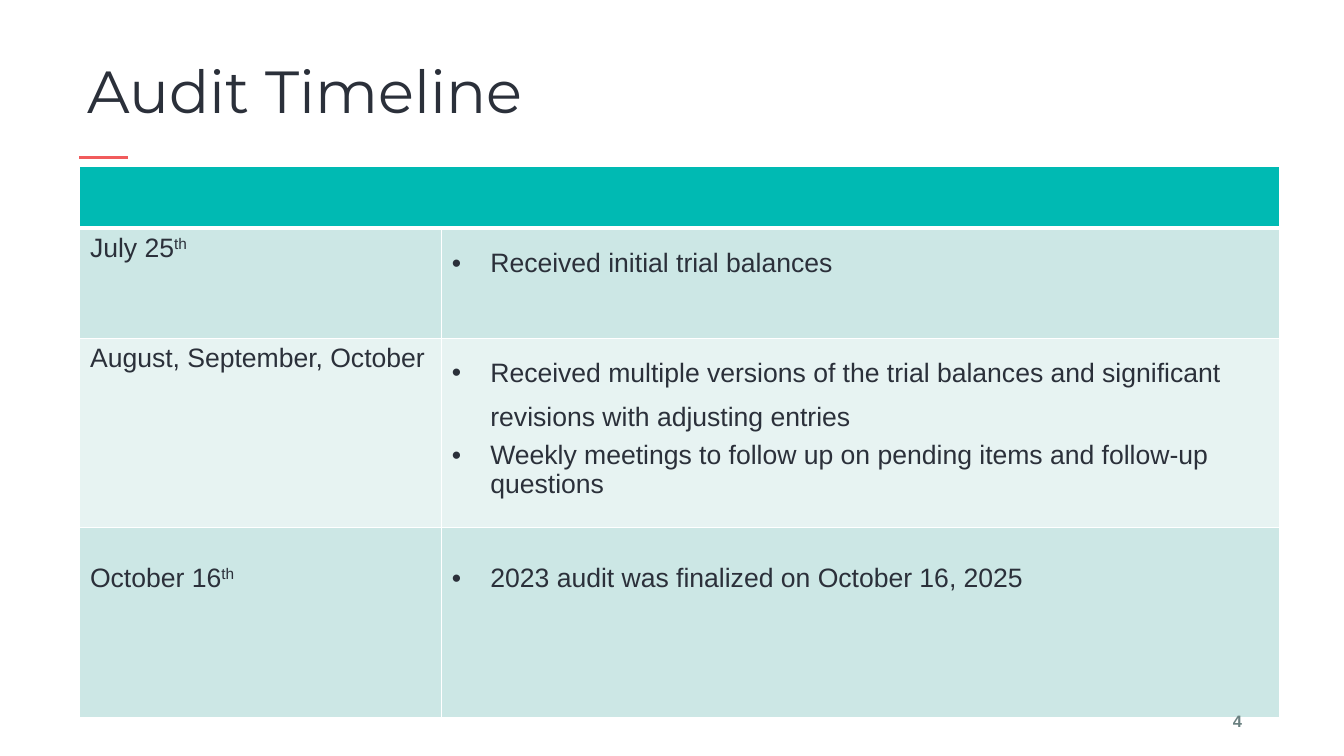
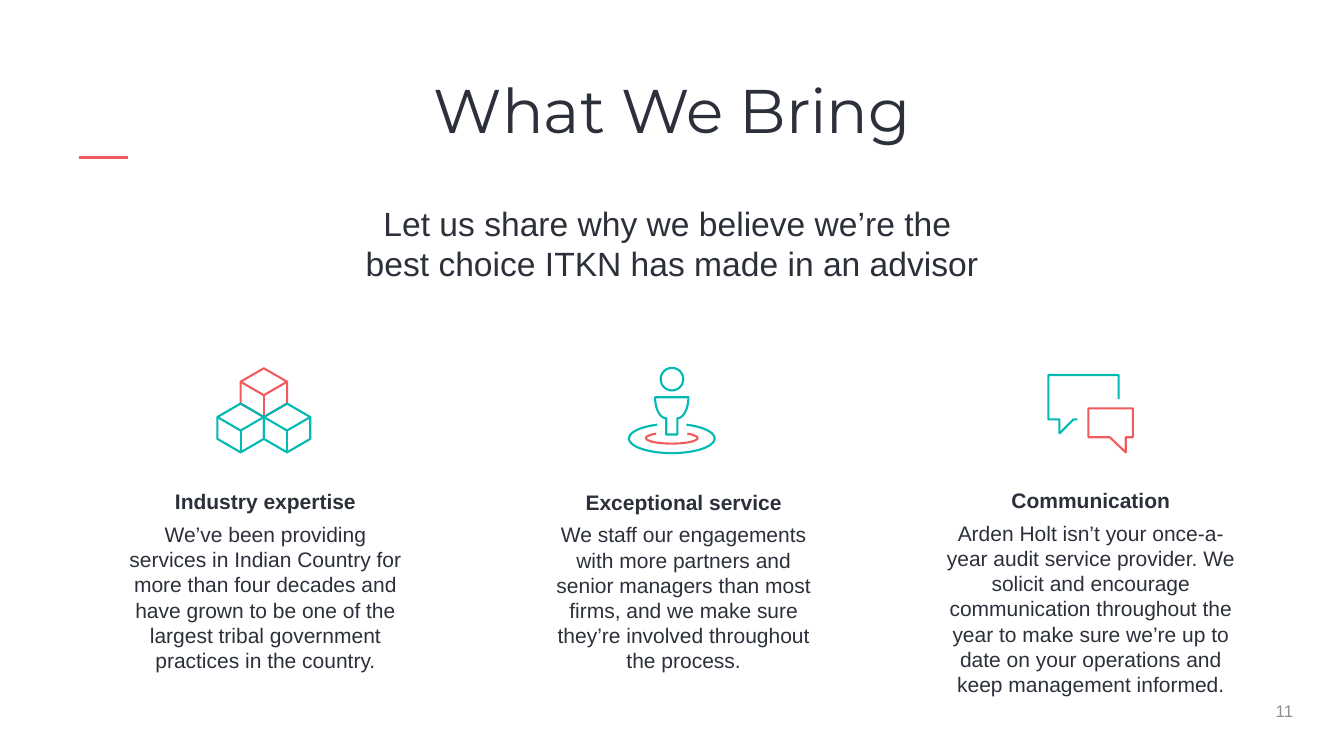
from math import cos, radians, sin

from lxml import etree
from pptx import Presentation
from pptx.dml.color import RGBColor
from pptx.enum.shapes import MSO_CONNECTOR, MSO_SHAPE
from pptx.enum.text import MSO_ANCHOR, MSO_AUTO_SIZE, PP_ALIGN
from pptx.oxml.ns import qn
from pptx.util import Cm, Pt

LEFT, CENTER, RIGHT = PP_ALIGN.LEFT, PP_ALIGN.CENTER, PP_ALIGN.RIGHT
MIDDLE, NO_AUTOFIT = MSO_ANCHOR.MIDDLE, MSO_AUTO_SIZE.NONE
STRAIGHT, OVAL = MSO_CONNECTOR.STRAIGHT, MSO_SHAPE.OVAL

INK = RGBColor(0x2B, 0x30, 0x3A)
TEAL = RGBColor(0x00, 0xBA, 0xB3)
CORAL = RGBColor(0xF1, 0x5B, 0x5C)
BAND_DARK = RGBColor(0xCC, 0xE7, 0xE5)
BAND_LIGHT = RGBColor(0xE7, 0xF3, 0xF2)
SLATE = RGBColor(0x6A, 0x80, 0x80)
GRAY = RGBColor(0x8F, 0x8F, 0x91)

TITLE_FONT, BODY_FONT = "Montserrat", "Arial"
TITLE_ONLY, TITLE_AND_BODY = 5, 1
ICON_LINE = 1.5
TABLE_SIZE = 19


def arc(center_x, center_y, radius_x, radius_y, start, end, steps=40):
    """Points along an ellipse; angles in degrees, clockwise from the right."""
    angles = [radians(start + (end - start) * step / steps) for step in range(steps + 1)]
    return [(center_x + radius_x * cos(angle), center_y + radius_y * sin(angle))
            for angle in angles]


def set_bullet(paragraph, character, indent):
    """Give a hanging bullet, or none when character is None."""
    properties = paragraph._p.get_or_add_pPr()
    properties.set("marL", str(Cm(indent)))
    properties.set("indent", str(-Cm(indent)))
    if character:
        etree.SubElement(properties, qn("a:buFont"), typeface=BODY_FONT)
        etree.SubElement(properties, qn("a:buChar"), char=character)
    else:
        etree.SubElement(properties, qn("a:buNone"))


def set_border(cell, side, width):
    border = etree.SubElement(cell._tc.get_or_add_tcPr(), qn("a:ln" + side), w=str(Pt(width)))
    fill = etree.SubElement(border, qn("a:solidFill"))
    etree.SubElement(fill, qn("a:srgbClr"), val="FFFFFF")


class Deck:
    """Holds the shared style and the slide being filled."""

    def __init__(self):
        self.presentation = Presentation()
        self.presentation.slide_width = Cm(33.87)
        self.presentation.slide_height = Cm(19.05)
        self.slide = None

    def new_slide(self, layout):
        layouts = self.presentation.slide_layouts
        self.slide = self.presentation.slides.add_slide(layouts[layout])
        self.line(self.slide.shapes, (2, 3.97), (3.23, 3.97), CORAL, 2)

    def run(self, paragraph, text, size, color=INK, font=BODY_FONT, bold=False, raised=False):
        run = paragraph.add_run()
        run.text = text
        run.font.size = Pt(size)
        run.font.name = font
        run.font.bold = bold
        run.font.color.rgb = color
        if raised:
            run._r.get_or_add_rPr().set("baseline", "30000")

    def place(self, shape, left, top, width, height):
        shape.left, shape.top = Cm(left), Cm(top)
        shape.width, shape.height = Cm(width), Cm(height)
        shape.text_frame.word_wrap = True
        shape.text_frame.auto_size = NO_AUTOFIT
        return shape.text_frame

    def title(self, text, box, size, alignment):
        frame = self.place(self.slide.shapes.title, *box)
        frame.vertical_anchor = MIDDLE
        paragraph = frame.paragraphs[0]
        paragraph.alignment = alignment
        paragraph.line_spacing = 0.9
        self.run(paragraph, text, size, font=TITLE_FONT)

    def body(self, lines, box, size):
        frame = self.place(self.slide.placeholders[1], *box)
        paragraph = frame.paragraphs[0]
        set_bullet(paragraph, None, 0)
        paragraph.alignment = CENTER
        paragraph.space_before = Pt(0)
        for index, line in enumerate(lines):
            if index:
                paragraph.add_line_break()
            self.run(paragraph, line, size)

    def text_box(self, *box):
        return self.place(self.slide.shapes.add_textbox(0, 0, 0, 0), *box)

    def page_number(self, number, left, top, size, color, bold=False):
        frame = self.text_box(left, top, 7.62, 1.02)
        frame.vertical_anchor = MIDDLE
        frame.paragraphs[0].alignment = RIGHT
        self.run(frame.paragraphs[0], number, size, color, bold=bold)

    def strength(self, heading, text, left, top, width):
        """A bold heading above centred text."""
        frame = self.text_box(left, top, width, 5.79)
        first, second = frame.paragraphs[0], frame.add_paragraph()
        first.alignment = second.alignment = CENTER
        first.line_spacing = 0.9
        second.space_before = Pt(5)
        self.run(first, heading, 15, bold=True)
        self.run(second, text, 15)

    def timeline(self, entries, box, widths, heights):
        """Entries are (date, suffix, bullets, top margin); a blank header row comes first.

        Each bullet is (text, line spacing, space after).
        """
        left, top, width, height = map(Cm, box)
        shapes = self.slide.shapes
        table = shapes.add_table(len(heights), len(widths), left, top, width, height).table
        for column, column_width in zip(table.columns, widths):
            column.width = Cm(column_width)
        for row, row_height in zip(table.rows, heights):
            row.height = Cm(row_height)
        fills = [TEAL, BAND_DARK, BAND_LIGHT, BAND_DARK]
        for row_index, row in enumerate(table.rows):
            for cell in row.cells:
                for side in "LRTB":
                    under_header = (row_index, side) in ((0, "B"), (1, "T"))
                    set_border(cell, side, 3 if under_header else 1)
                cell.fill.solid()
                cell.fill.fore_color.rgb = fills[row_index]
                cell.margin_left = cell.margin_right = Cm(0.27)
        table.cell(0, 0).merge(table.cell(0, len(widths) - 1))
        for row_index, (date, suffix, bullets, margin) in enumerate(entries, 1):
            date_cell, notes_cell = table.cell(row_index, 0), table.cell(row_index, 1)
            date_cell.margin_top = notes_cell.margin_top = Cm(margin)
            paragraph = date_cell.text_frame.paragraphs[0]
            self.run(paragraph, date, TABLE_SIZE)
            if suffix:
                self.run(paragraph, suffix, TABLE_SIZE, raised=True)
            frame = notes_cell.text_frame
            for index, (text, spacing, after) in enumerate(bullets):
                paragraph = frame.add_paragraph() if index else frame.paragraphs[0]
                set_bullet(paragraph, "•", 0.97)
                paragraph.line_spacing = spacing
                paragraph.space_after = Pt(after)
                self.run(paragraph, text, TABLE_SIZE)

    def line(self, shapes, start, end, color, width):
        connector = shapes.add_connector(STRAIGHT, *map(Cm, start + end))
        connector.line.color.rgb = color
        connector.line.width = Pt(width)
        etree.SubElement(connector._element.spPr, qn("a:effectLst"))

    def icon(self):
        return self.slide.shapes.add_group_shape().shapes

    def outline_style(self, shape, color):
        shape.shadow.inherit = False
        shape.fill.background()
        shape.line.color.rgb = color
        shape.line.width = Pt(ICON_LINE)

    def outline(self, shapes, points, color, close=False):
        points = [(Cm(x), Cm(y)) for x, y in points]
        builder = shapes.build_freeform(*points[0], scale=1.0)
        builder.add_line_segments(points[1:], close=close)
        self.outline_style(builder.convert_to_shape(), color)

    def cube(self, shapes, x, y, color):
        """A cube whose front upper corner is at x, y."""
        half, rise, edge = 0.585, 0.34, 0.55
        left, right, shoulder = x - half, x + half, y - rise
        self.outline(shapes, [(right, shoulder), (right, shoulder + edge), (x, y + edge),
                              (left, shoulder + edge), (left, shoulder)], color)
        self.outline(shapes, [(right, shoulder), (x, y), (left, shoulder),
                              (x, shoulder - rise)], color, close=True)
        self.line(shapes, (x, y), (x, y + edge), color, ICON_LINE)

    def cubes_icon(self, x, y):
        shapes = self.icon()
        self.cube(shapes, x, y, CORAL)
        for offset in (0.585, -0.585):
            self.cube(shapes, x + offset, y + 0.89, TEAL)

    def person_icon(self, x, y):
        """A figure standing in two rings; x, y is the middle of its shoulders."""
        shapes = self.icon()
        head = shapes.add_shape(OVAL, Cm(x - 0.28), Cm(y - 0.74), Cm(0.57), Cm(0.57))
        self.outline_style(head, TEAL)
        neck = 0.14
        torso = (arc(x - neck, y, 0.28, 0.53, 180, 90)
                 + [(x - neck, y + 0.94), (x + neck, y + 0.94)]
                 + arc(x + neck, y, 0.28, 0.53, 90, 0))
        self.outline(shapes, torso, TEAL, close=True)
        self.outline(shapes, arc(x, y + 1.03, 0.65, 0.14, -53, 233), CORAL)
        self.outline(shapes, arc(x, y + 1.04, 1.08, 0.37, -70, 250), TEAL)

    def speech_icon(self):
        shapes = self.icon()
        self.outline(shapes, [(27.15, 10.57), (27.05, 10.57), (26.7, 10.92), (26.7, 10.57),
                              (26.42, 10.57), (26.42, 9.45), (28.19, 9.45), (28.19, 10.06)],
                     TEAL)
        self.outline(shapes, [(27.43, 11.02), (27.97, 11.02), (28.37, 11.4), (28.37, 11.02),
                              (28.55, 11.02), (28.55, 10.29), (27.43, 10.29)],
                     CORAL, close=True)


def timeline_slide(deck):
    deck.new_slide(TITLE_ONLY)
    deck.title("Audit Timeline", (1.96, 1.37, 29.95, 2.03), 42.4, LEFT)
    entries = [
        ("July 25", "th", [("Received initial trial balances", 1.5, 0)], 0.13),
        ("August, September, October", "", [
            ("Received multiple versions of the trial balances and significant "
             "revisions with adjusting entries", 1.5, 6),
            ("Weekly meetings to follow up on pending items and follow-up questions", 1.0, 0),
        ], 0.13),
        ("October 16", "th", [("2023 audit was finalized on October 16, 2025", 1.0, 0)], 0.9),
    ]
    deck.timeline(entries, (2, 4.2, 30.25, 13.87), (9.12, 21.13), (1.55, 2.77, 4.78, 4.78))
    deck.page_number("4", 23.93, 17.65, 11.8, SLATE, bold=True)


def strengths_slide(deck):
    deck.new_slide(TITLE_AND_BODY)
    deck.page_number("11", 25.22, 17.4, 12, GRAY)
    deck.title("What We Bring", (2.34, 1.02, 29.21, 3.68), 44, CENTER)
    deck.body(["Let us share why we believe we’re the ",
               "best choice ITKN has made in an advisor"], (1.96, 4.98, 29.95, 2.69), 24)
    strengths = [
        ("Industry expertise",
         "We’ve been providing services in Indian Country for more than four decades and "
         "have grown to be one of the largest tribal government practices in the country.",
         2.97, 12.27, 7.44),
        ("Exceptional service",
         "We staff our engagements with more partners and senior managers than most firms, "
         "and we make sure they’re involved throughout the process.",
         13.61, 12.28, 7.24),
        ("Communication",
         "Arden Holt isn’t your once-a-year audit service provider. We solicit and encourage "
         "communication throughout the year to make sure we’re up to date on your operations "
         "and keep management informed.",
         23.44, 12.24, 8.1),
    ]
    for strength in strengths:
        deck.strength(*strength)
    deck.cubes_icon(6.65, 9.96)
    deck.person_icon(16.93, 10.01)
    deck.speech_icon()


def main():
    deck = Deck()
    timeline_slide(deck)
    strengths_slide(deck)
    deck.presentation.save("out.pptx")


if __name__ == "__main__":
    main()
